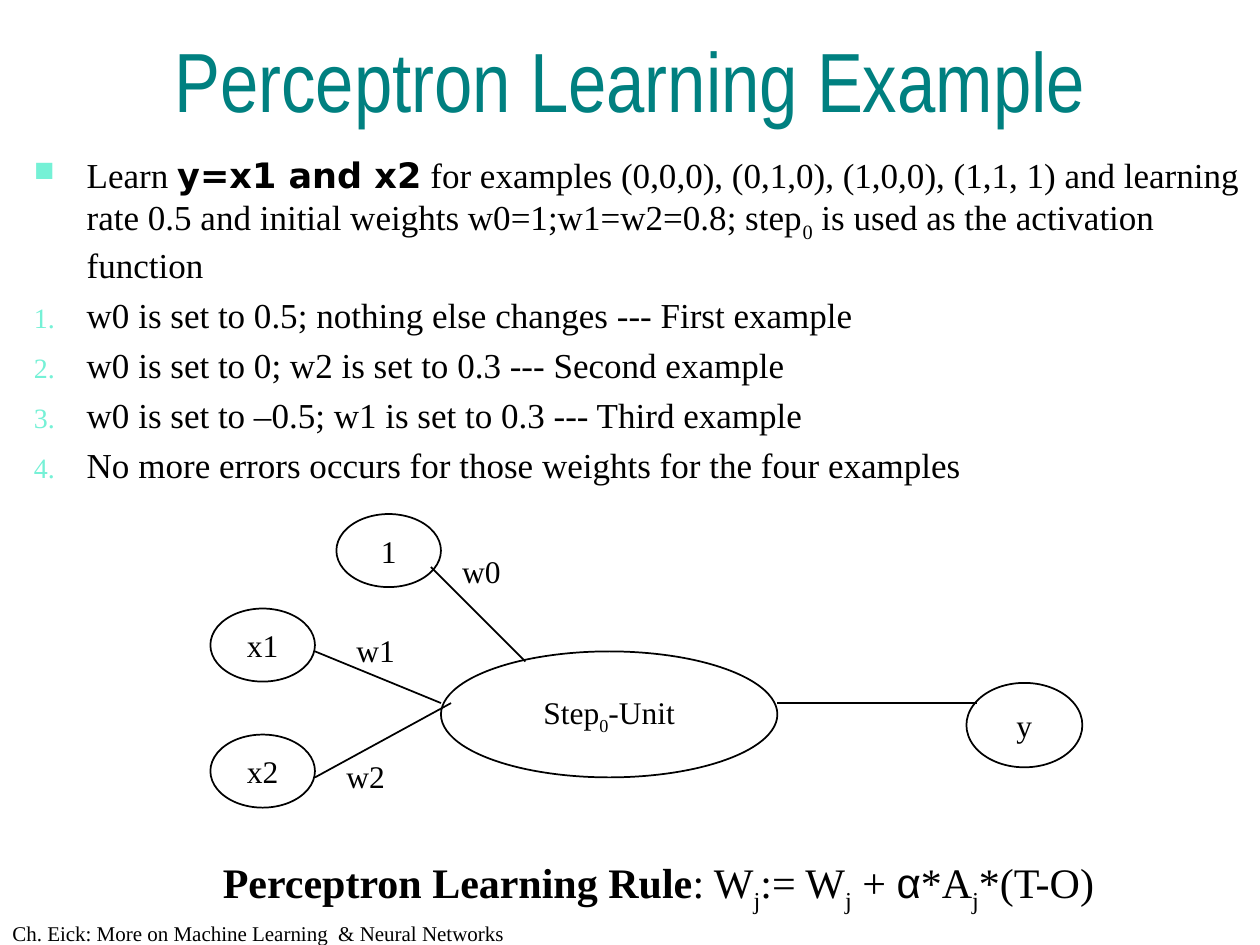
from dataclasses import dataclass

from lxml.etree import SubElement
from pptx import Presentation
from pptx.dml.color import RGBColor
from pptx.enum.shapes import MSO_CONNECTOR, MSO_SHAPE
from pptx.enum.text import MSO_ANCHOR, MSO_AUTO_SIZE, PP_ALIGN
from pptx.oxml.ns import qn
from pptx.util import Inches, Pt


@dataclass(frozen=True)
class Theme:
    ink = RGBColor(0x00, 0x00, 0x00)
    paper = RGBColor(0xFF, 0xFF, 0xFF)
    heading = RGBColor(0x00, 0x80, 0x80)
    bullet = "75F1D6"
    serif = "Times New Roman"
    heading_font = "Arial Narrow"
    formula_font = "DejaVu Sans"
    greek_font = "Arial"
    heading_size = Pt(48)
    rule_size = Pt(24)
    body_size = Pt(20)
    diagram_size = Pt(18)
    footer_size = Pt(12)
    outline = Pt(1)


theme = Theme()


def write(paragraph, parts, size):
    """Fill a paragraph with (text, style) parts; style is "", "sub", "bold", "formula" or "greek"."""
    paragraph.font.name = theme.serif
    paragraph.font.size = size
    paragraph.font.color.rgb = theme.ink
    for text, style in parts:
        run = paragraph.add_run()
        run.text = text
        if style == "sub":
            run.font._element.set("baseline", "-25000")
        elif style == "greek":
            run.font.name = theme.greek_font
        elif style in ("bold", "formula"):
            run.font.bold = True
            if style == "formula":
                run.font.name = theme.formula_font


def add_label(left, top, width, height, parts, size, wrap=False):
    label = slide.shapes.add_textbox(Inches(left), Inches(top), Inches(width), Inches(height))
    label.text_frame.word_wrap = wrap
    write(label.text_frame.paragraphs[0], parts, size)


prs = Presentation()
prs.slide_width, prs.slide_height = Inches(10), Inches(7.5)
slide = prs.slides.add_slide(prs.slide_layouts[5])

add_label(0, 7.26, 4.67, 0.3,
          [("Ch. Eick: More on Machine Learning  & Neural Networks", "")],
          theme.footer_size, wrap=True)

# Title
title = slide.shapes.title
title.left, title.top = Inches(0.25), Inches(0)
title.width, title.height = Inches(9.5), Inches(1.25)
title.text_frame.text = "Perceptron Learning Example"
title.text_frame.auto_size = MSO_AUTO_SIZE.NONE
title.text_frame.vertical_anchor = MSO_ANCHOR.MIDDLE
heading = title.text_frame.paragraphs[0]
heading.alignment = PP_ALIGN.CENTER
heading.font.name = theme.heading_font
heading.font.size = theme.heading_size
heading.font.color.rgb = theme.heading

# Task and training steps
task = [
    ("Learn ", ""),
    ("y=x1 and x2", "formula"),
    (" for examples (0,0,0), (0,1,0), (1,0,0), (1,1, 1) and learning rate 0.5 "
     "and initial weights w0=1;w1=w2=0.8; step", ""),
    ("0", "sub"),
    (" is used as the activation function", ""),
]
steps = [
    "w0 is set to 0.5; nothing else changes --- First example",
    "w0 is set to 0; w2 is set to 0.3 --- Second example",
    "w0 is set to –0.5; w1 is set to 0.3 --- Third example",
    "No more errors occurs for those weights for the four examples",
]
body = slide.shapes.add_textbox(Inches(0.17), Inches(1.17), Inches(9.83), Inches(6)).text_frame
body.word_wrap = True
for index, parts in enumerate([task] + [[(step, "")] for step in steps]):
    item = body.add_paragraph() if index else body.paragraphs[0]
    properties = item._p.get_or_add_pPr()
    properties.set("marL", str(Inches(0.42)))
    properties.set("indent", str(-Inches(0.42)))
    bullet_color = SubElement(properties, qn("a:buClr"))
    SubElement(bullet_color, qn("a:srgbClr"), val=theme.bullet)
    SubElement(properties, qn("a:buSzPct"), val="80000")
    if index:
        SubElement(properties, qn("a:buFont"), typeface=theme.serif)
        SubElement(properties, qn("a:buAutoNum"), type="arabicPeriod")
    else:
        SubElement(properties, qn("a:buChar"), char="■")
    item.space_before = Pt(4.6)
    write(item, parts, theme.body_size)

# Network units
units = [
    (1.67, 4.83, 0.83, 0.58, [("x1", "")]),
    (1.67, 5.83, 0.83, 0.58, [("x2", "")]),
    (2.67, 4.08, 0.83, 0.58, [("1", "")]),
    (3.5, 5.17, 2.67, 1, [("Step", ""), ("0", "sub"), ("-Unit", "")]),
    (7.67, 5.42, 0.92, 0.67, [("y", "")]),
]
for left, top, width, height, parts in units:
    unit = slide.shapes.add_shape(MSO_SHAPE.OVAL, Inches(left), Inches(top),
                                  Inches(width), Inches(height))
    unit.shadow.inherit = False
    unit.fill.solid()
    unit.fill.fore_color.rgb = theme.paper
    unit.line.color.rgb = theme.ink
    unit.line.width = theme.outline
    unit.text_frame.word_wrap = False
    unit.text_frame.vertical_anchor = MSO_ANCHOR.MIDDLE
    caption = unit.text_frame.paragraphs[0]
    caption.alignment = PP_ALIGN.CENTER
    write(caption, parts, theme.diagram_size)

# Connections between units
links = [
    (3.42, 4.5, 4.17, 5.25),
    (2.5, 5.17, 3.5, 5.58),
    (2.5, 6.17, 3.58, 5.58),
    (6.17, 5.58, 7.75, 5.58),
]
for ends in links:
    link = slide.shapes.add_connector(MSO_CONNECTOR.STRAIGHT, *map(Inches, ends))
    link.line.color.rgb = theme.ink
    link.line.width = theme.outline
    SubElement(link._element.spPr, qn("a:effectLst"))

for weight, left, top in [("w0", 3.57, 4.33), ("w1", 2.73, 4.96), ("w2", 2.65, 5.96)]:
    add_label(left, top, 0.51, 0.4, [(weight, "")], theme.diagram_size)

# Learning rule
rule = [
    ("Perceptron Learning Rule", "bold"),
    (": W", ""), ("j", "sub"),
    (":= W", ""), ("j", "sub"),
    (" + ", ""), ("α", "greek"),
    ("*A", ""), ("j", "sub"),
    ("*(T-O)", ""),
]
add_label(1.67, 6.75, 7.21, 0.5, rule, theme.rule_size)

prs.save("out.pptx")
